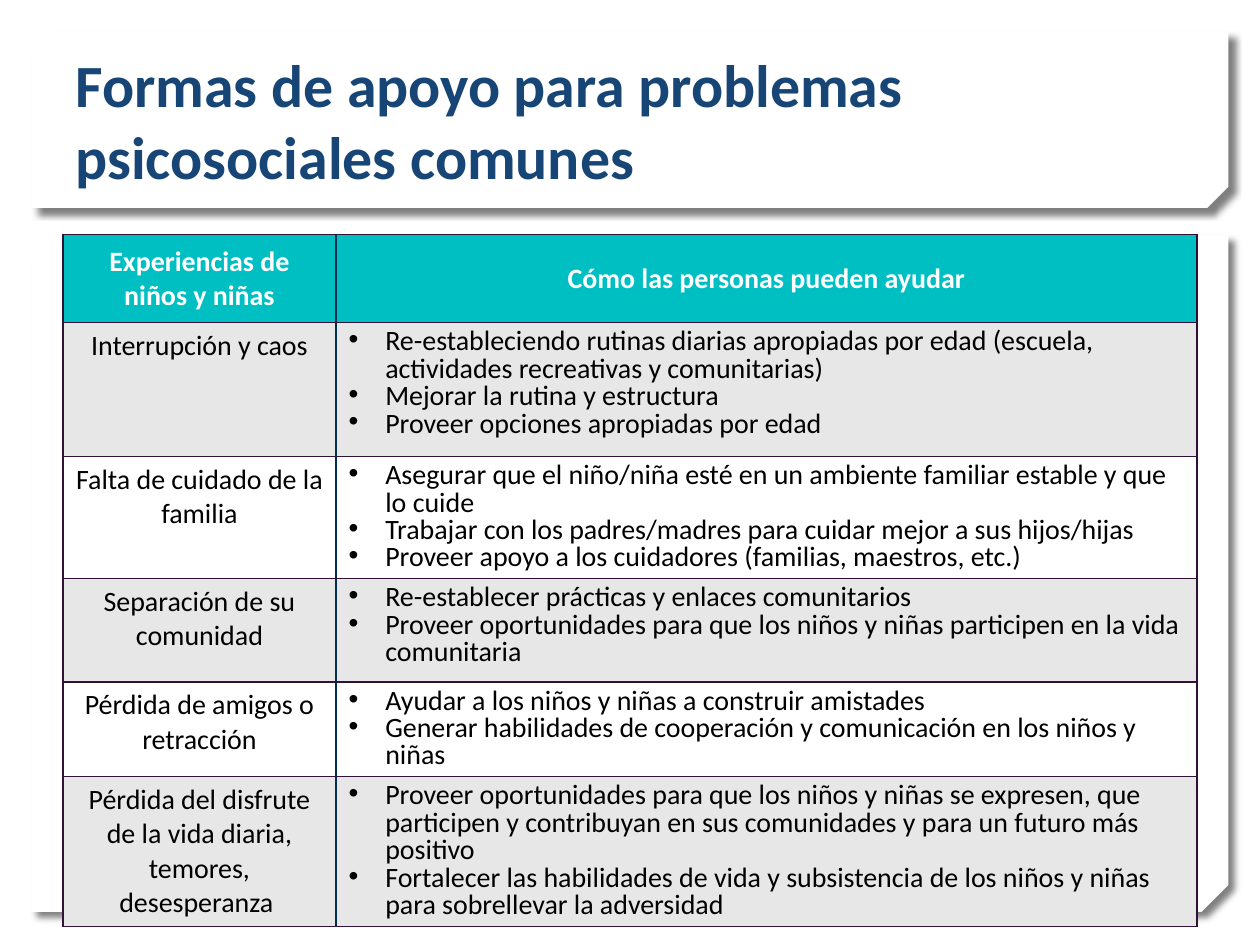
"""Build the slide on support for common psychosocial problems."""
from dataclasses import dataclass

from lxml.etree import SubElement
from pptx import Presentation
from pptx.dml.color import RGBColor as Color
from pptx.enum.shapes import MSO_SHAPE as Shape
from pptx.enum.text import MSO_ANCHOR as Anchor, PP_ALIGN as Align
from pptx.oxml.ns import qn
from pptx.util import Pt


@dataclass(frozen=True)
class Theme:
    """Hold the colours, font and type sizes."""
    font: str = "Calibri"
    title_size: float = 34.2
    table_size: float = 16
    title: str = "174576"
    header: str = "00BFC3"
    band: str = "E8E7E8"
    white: str = "FFFFFF"
    black: str = "000000"
    border: str = "321138"
    divider: str = "002E4E"


HEADERS = ("Experiencias de niños y niñas", "Cómo las personas pueden ayudar")
ROWS = (
    ("Interrupción y caos", (
        "Re-estableciendo rutinas diarias apropiadas por edad (escuela, actividades recreativas y comunitarias)",
        "Mejorar la rutina y estructura",
        "Proveer opciones apropiadas por edad")),
    ("Falta de cuidado de la familia", (
        "Asegurar que el niño/niña esté en un ambiente familiar estable y que lo cuide",
        "Trabajar con los padres/madres para cuidar mejor a sus hijos/hijas",
        "Proveer apoyo a los cuidadores (familias, maestros, etc.)")),
    ("Separación de su comunidad", (
        "Re-establecer prácticas y enlaces comunitarios",
        "Proveer oportunidades para que los niños y niñas participen en la vida comunitaria")),
    ("Pérdida de amigos o retracción", (
        "Ayudar a los niños y niñas a construir amistades",
        "Generar habilidades de cooperación y comunicación en los niños y niñas")),
    ("Pérdida del disfrute de la vida diaria, temores, desesperanza ", (
        "Proveer oportunidades para que los niños y niñas se expresen, que participen y contribuyan "
        "en sus comunidades y para un futuro más positivo",
        "Fortalecer las habilidades de vida y subsistencia de los niños y niñas para sobrellevar la adversidad")),
)
COLUMN_WIDTHS = (156, 492)
ROW_HEIGHTS = (50.4, 76.5, 59, 59, 50.4, 76.5)


def apply_format(target, values):
    """Set each attribute named in a dict of format values."""
    for name, value in values.items():
        setattr(target, name, value)


class SlideBuilder:
    """Draw themed elements on the current slide."""

    def __init__(self, slide, theme):
        self.slide = slide
        self.theme = theme

    def add_text(self, paragraph, text, size, color, bold=False):
        """Add one formatted run to a paragraph."""
        run = paragraph.add_run()
        run.text = text
        apply_format(run.font, {"name": self.theme.font, "size": Pt(size), "bold": bold})
        run.font.color.rgb = Color.from_string(color)

    def panel(self, left, top, width, height, snip):
        """Add a white card with snipped corners and a soft shadow."""
        shape = self.slide.shapes.add_shape(
            Shape.SNIP_2_DIAG_RECTANGLE, Pt(left), Pt(top), Pt(width), Pt(height))
        shape.adjustments[0], shape.adjustments[1] = 0, snip
        shape.fill.solid()
        shape.fill.fore_color.rgb = Color.from_string(self.theme.white)
        shape.line.fill.background()
        shape.shadow.inherit = False
        properties = shape._element.spPr
        properties.find(qn("a:xfrm")).set("flipV", "1")
        shadow = SubElement(properties.find(qn("a:effectLst")), qn("a:outerShdw"), {
            "blurRad": str(Pt(4)), "dist": str(Pt(5)), "dir": str(45 * 60000),
            "algn": "tl", "rotWithShape": "0"})
        color = SubElement(shadow, qn("a:srgbClr"), val=self.theme.black)
        SubElement(color, qn("a:alpha"), val="50000")

    def title(self, text, left, top, width, height):
        """Place the title placeholder in front of the cards."""
        shape = self.slide.shapes.title
        apply_format(shape, {"left": Pt(left), "top": Pt(top),
                             "width": Pt(width), "height": Pt(height)})
        apply_format(shape.text_frame, {"word_wrap": True, "vertical_anchor": Anchor.BOTTOM})
        paragraph = shape.text_frame.paragraphs[0]
        paragraph.alignment = Align.LEFT
        self.add_text(paragraph, text, self.theme.title_size, self.theme.title, True)
        shape._element.getparent().append(shape._element)

    def bullet(self, paragraph):
        """Give a paragraph a hanging bullet and tight lines."""
        apply_format(paragraph, {"alignment": Align.LEFT, "line_spacing": 0.8})
        properties = paragraph._p.get_or_add_pPr()
        for name, indent in {"marL": 21, "indent": -21}.items():
            properties.set(name, str(Pt(indent)))
        SubElement(properties, qn("a:buFont"), typeface="Arial")
        SubElement(properties, qn("a:buChar"), char="•")

    def style_cell(self, cell, fill, sides):
        """Set the borders and then the fill of a cell."""
        properties = cell._tc.get_or_add_tcPr()
        for side, color in sides.items():
            line = SubElement(properties, qn(f"a:ln{side}"), w=str(Pt(1)))
            SubElement(SubElement(line, qn("a:solidFill")), qn("a:srgbClr"), val=color)
        cell.fill.solid()
        cell.fill.fore_color.rgb = Color.from_string(fill)

    def table(self, left, top, headers, rows, widths, heights):
        """Add the table of experiences and ways to help."""
        theme = self.theme
        table = self.slide.shapes.add_table(
            len(heights), len(widths), Pt(left), Pt(top), Pt(sum(widths)), Pt(sum(heights))).table
        apply_format(table, {"first_row": False, "horz_banding": False})
        for column, width in zip(table.columns, widths):
            column.width = Pt(width)
        for row, height in zip(table.rows, heights):
            row.height = Pt(height)
        for row_index, row in enumerate((headers, *rows)):
            is_header = row_index == 0
            fill = theme.header if is_header else theme.band if row_index % 2 else theme.white
            color = theme.white if is_header else theme.black
            for column_index, content in enumerate(row):
                cell = table.cell(row_index, column_index)
                is_list = isinstance(content, tuple)
                sides = dict.fromkeys("LRTB", theme.border)
                sides["L" if column_index else "R"] = theme.divider
                self.style_cell(cell, fill, sides)
                cell.vertical_anchor = Anchor.MIDDLE if is_header else Anchor.TOP
                for index, text in enumerate(content if is_list else (content,)):
                    frame = cell.text_frame
                    paragraph = frame.add_paragraph() if index else frame.paragraphs[0]
                    if is_list:
                        self.bullet(paragraph)
                    else:
                        paragraph.alignment = Align.CENTER
                    self.add_text(paragraph, text, theme.table_size, color, is_header)


def main():
    """Build and save the presentation."""
    presentation = Presentation()
    apply_format(presentation, {"slide_width": Pt(720), "slide_height": Pt(540)})
    slide = presentation.slides.add_slide(presentation.slide_layouts[5])
    builder = SlideBuilder(slide, Theme())
    builder.panel(18, 134.6, 684, 386.6, 0.04)
    builder.panel(18, 18, 684, 100.8, 0.12)
    builder.title("Formas de apoyo para problemas psicosociales comunes", 36, 23, 648, 90)
    builder.table(36, 134, HEADERS, ROWS, COLUMN_WIDTHS, ROW_HEIGHTS)
    presentation.save("out.pptx")


if __name__ == "__main__":
    main()
